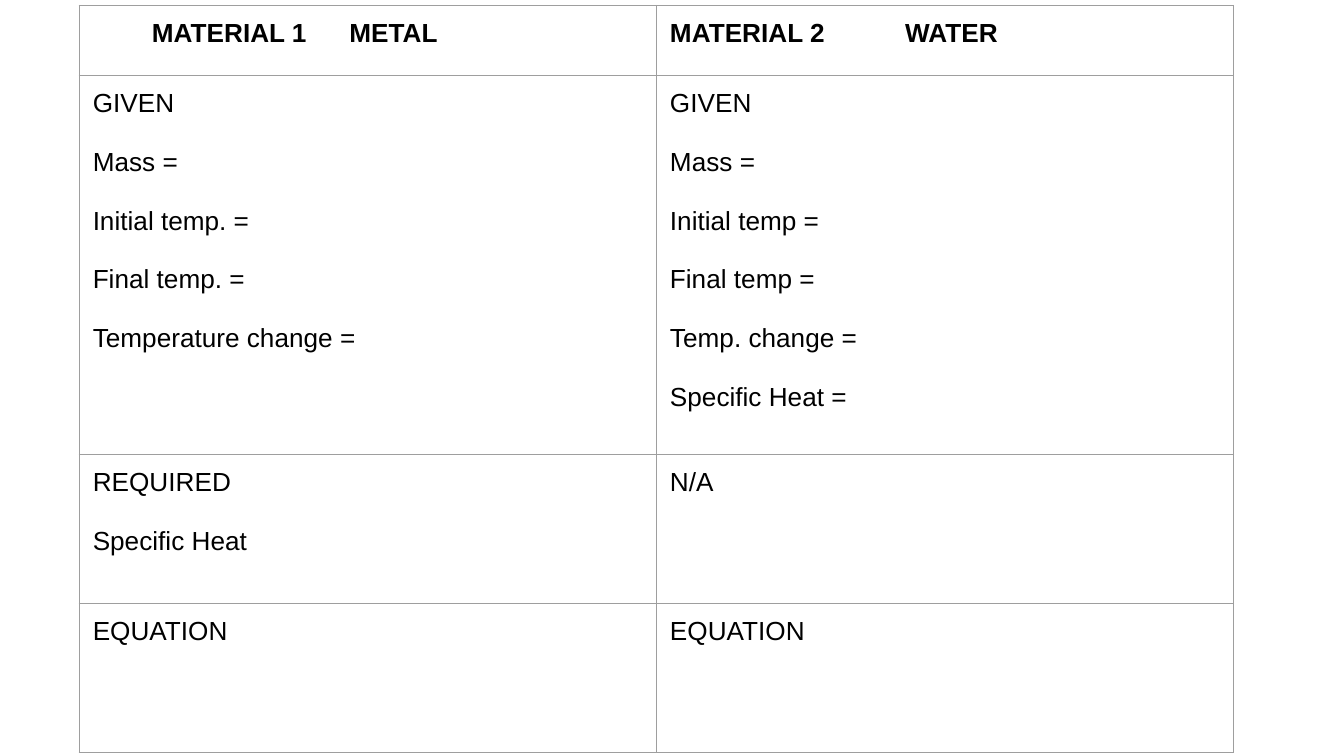
from dataclasses import dataclass

from lxml import etree
from pptx import Presentation
from pptx.dml.color import RGBColor
from pptx.oxml.ns import qn
from pptx.util import Inches, Pt

BLANK_LAYOUT = 6


@dataclass(frozen=True)
class Theme:
    """Colours, font and sizes used on the slide."""
    font: str = "Arial"
    text_size: float = 14
    paragraph_gap: float = 15.75
    border_width: float = 0.75
    text: str = "000000"
    border: str = "9E9E9E"
    background: str = "FFFFFF"


THEME = Theme()
CELL_MARGIN = Inches(0.1)
ROW_HEIGHTS = (0.52, 2.82, 1.11, 1.11)
HEADER_TABS = ((0.44, 1.91), (1.75,))
ROWS = (
    (("\tMATERIAL 1\tMETAL",), ("MATERIAL 2\tWATER",)),
    (
        ("GIVEN", "Mass =", "Initial temp. =", "Final temp. =", "Temperature change ="),
        ("GIVEN", "Mass =", "Initial temp =", "Final temp =", "Temp. change =", "Specific Heat ="),
    ),
    (("REQUIRED", "Specific Heat"), ("N/A",)),
    (("EQUATION",), ("EQUATION",)),
)


def set_borders(cell):
    """Draw a thin line on all four sides of a cell."""
    properties = cell._tc.get_or_add_tcPr()
    for index, side in enumerate(("lnL", "lnR", "lnT", "lnB")):
        line = etree.Element(qn(f"a:{side}"), w=str(Pt(THEME.border_width)))
        fill = etree.SubElement(line, qn("a:solidFill"))
        etree.SubElement(fill, qn("a:srgbClr"), val=THEME.border)
        properties.insert(index, line)


def set_tab_stops(paragraph, positions):
    """Give a paragraph left tab stops at positions in inches."""
    tab_list = etree.SubElement(paragraph._p.get_or_add_pPr(), qn("a:tabLst"))
    for position in positions:
        etree.SubElement(tab_list, qn("a:tab"), pos=str(Inches(position)), algn="l")


def fill_cell(cell, lines, bold):
    """Write spaced lines into a cell and style it."""
    cell.fill.solid()
    cell.fill.fore_color.rgb = RGBColor.from_string(THEME.background)
    cell.margin_left = cell.margin_right = CELL_MARGIN
    cell.margin_top = cell.margin_bottom = CELL_MARGIN
    set_borders(cell)
    cell.text_frame.text = "\n".join(lines)
    for index, paragraph in enumerate(cell.text_frame.paragraphs):
        if index:
            paragraph.space_before = Pt(THEME.paragraph_gap)
        for run in paragraph.runs:
            run.font.name = THEME.font
            run.font.size = Pt(THEME.text_size)
            run.font.bold = bold
            run.font.color.rgb = RGBColor.from_string(THEME.text)


def add_worksheet(slide, left, top, width):
    """Place the two-material worksheet table in the given box."""
    height = Inches(sum(ROW_HEIGHTS))
    columns = len(HEADER_TABS)
    table = slide.shapes.add_table(len(ROWS), columns, left, top, width, height).table
    table.first_row = table.horz_banding = False
    for row_index, row in enumerate(ROWS):
        table.rows[row_index].height = Inches(ROW_HEIGHTS[row_index])
        for column_index, lines in enumerate(row):
            fill_cell(table.cell(row_index, column_index), lines, bold=row_index == 0)
    for column_index, positions in enumerate(HEADER_TABS):
        set_tab_stops(table.cell(0, column_index).text_frame.paragraphs[0], positions)


def main():
    """Build and save the presentation."""
    presentation = Presentation()
    presentation.slide_width = Inches(10)
    presentation.slide_height = presentation.slide_width * 9 // 16
    slide = presentation.slides.add_slide(presentation.slide_layouts[BLANK_LAYOUT])
    add_worksheet(slide, Inches(0.59), Inches(0.04), Inches(8.59))
    presentation.save("out.pptx")


if __name__ == "__main__":
    main()
